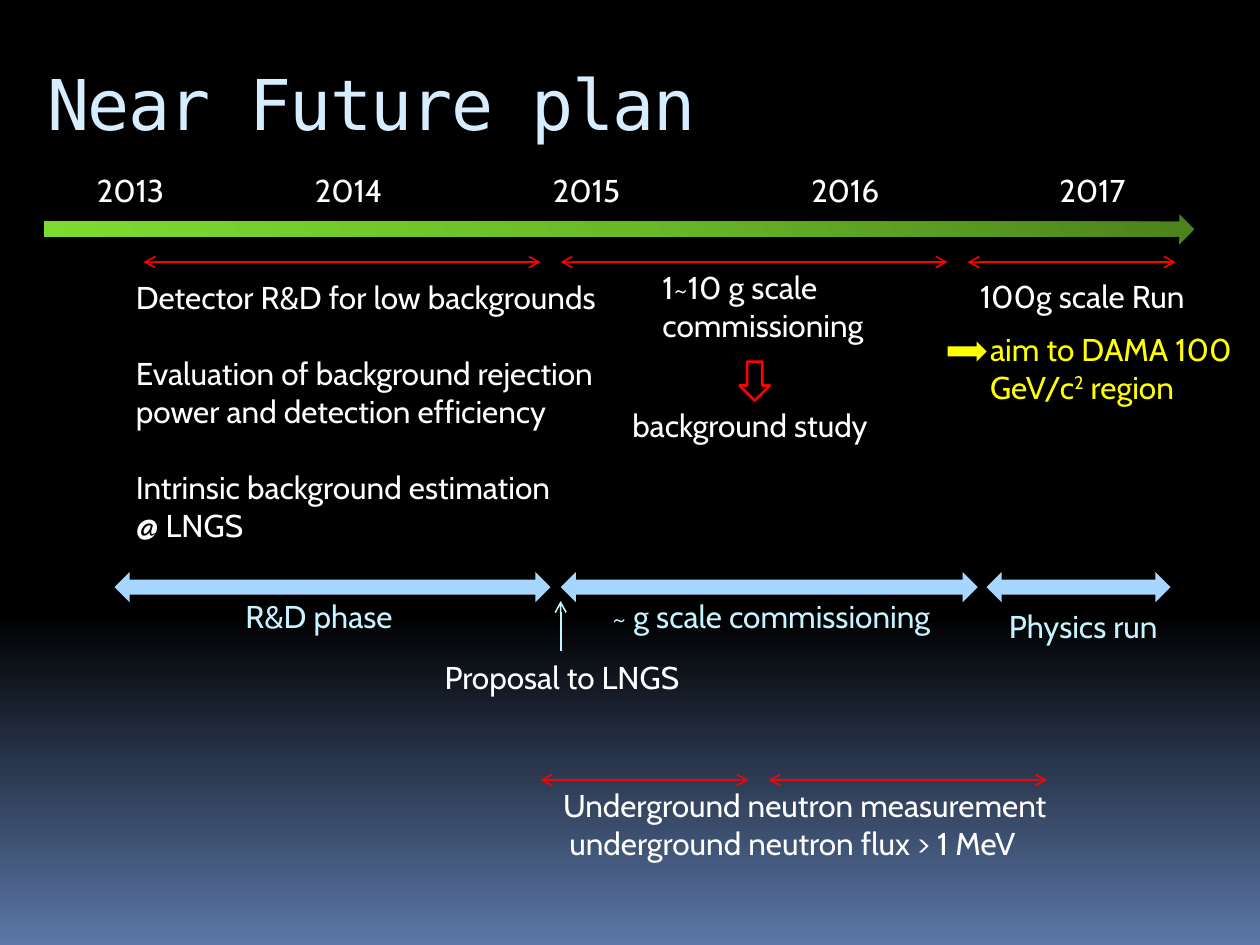
from lxml.etree import SubElement
from pptx import Presentation
from pptx.dml.color import RGBColor
from pptx.enum.shapes import MSO_CONNECTOR, MSO_SHAPE as Shape
from pptx.oxml.ns import qn
from pptx.util import Inches, Pt

WHITE, RED, YELLOW = "FFFFFF", "FF0000", "FFFF00"
PHASE_BAR, PHASE_TEXT = "A7D6FF", "C5F3FF"


def color(hex_code):
    return RGBColor.from_string(hex_code)


def set_gradient(fill, owner, stops, angle):
    """Fill with (percent, hex) stops, at a counter-clockwise angle."""
    fill.gradient()
    fill.gradient_angle = angle
    stop_list = owner.find(".//" + qn("a:gsLst"))
    for old_stop in list(stop_list):
        stop_list.remove(old_stop)
    for percent, hex_code in stops:
        stop = SubElement(stop_list, qn("a:gs"), pos=str(percent * 1000))
        SubElement(stop, qn("a:srgbClr"), val=hex_code)


class TimelineSlide:
    """Holds the text style and the slide being drawn."""

    font_name = "Cabin"
    font_size = 18

    def __init__(self, slide):
        self.slide = slide

    def background(self, stops, angle):
        set_gradient(self.slide.background.fill, self.slide._element, stops, angle)

    def text(self, left, top, width, height, *lines, ink=WHITE, size=None, font=None):
        box = self.slide.shapes.add_textbox(
            Inches(left), Inches(top), Inches(width), Inches(height))
        frame = box.text_frame
        frame.word_wrap = True
        for index, line in enumerate(lines):
            paragraph = frame.paragraphs[0] if index == 0 else frame.add_paragraph()
            paragraph.text = line
            paragraph.font.name = font or self.font_name
            paragraph.font.size = Pt(size or self.font_size)
            paragraph.font.color.rgb = color(ink)
        return frame

    def block_arrow(self, kind, left, top, width, height, fill=None, outline=None):
        arrow = self.slide.shapes.add_shape(
            kind, Inches(left), Inches(top), Inches(width), Inches(height))
        arrow.shadow.inherit = False
        if fill:
            arrow.fill.solid()
            arrow.fill.fore_color.rgb = color(fill)
        else:
            arrow.fill.background()
        if outline:
            arrow.line.color.rgb = color(outline)
            arrow.line.width = Pt(1.5)
        else:
            arrow.line.fill.background()
        return arrow

    def line_arrow(self, x1, y1, x2, y2, ink, ends=("headEnd", "tailEnd")):
        arrow = self.slide.shapes.add_connector(
            MSO_CONNECTOR.STRAIGHT, Inches(x1), Inches(y1), Inches(x2), Inches(y2))
        arrow.line.color.rgb = color(ink)
        arrow.line.width = Pt(0.94)
        for end in ends:
            SubElement(arrow.line._ln, qn("a:" + end), type="arrow")
        SubElement(arrow._element.spPr, qn("a:effectLst"))


def main():
    deck = Presentation()
    deck.slide_width, deck.slide_height = Inches(10), Inches(7.5)
    plan = TimelineSlide(deck.slides.add_slide(deck.slide_layouts[6]))
    plan.background([(0, "000000"), (65, "000000"), (100, "5B77A8")], 270)

    title = plan.text(0.28, 0.39, 8.5, 1, "Near Future plan",
                      ink="D6ECFF", size=40, font="DejaVu Sans Mono")
    title.margin_top = Inches(0.09)
    title.paragraphs[0].runs[0].font._element.set("spc", "-100")

    # Year axis
    axis = plan.block_arrow(Shape.RIGHT_ARROW, 0.35, 1.7, 9.13, 0.24)
    set_gradient(axis.fill, axis._element,
                 [(0, "4B821C"), (50, "6ABA28"), (100, "7EDC30")], 225)
    for year, left in enumerate((0.67, 2.4, 4.29, 6.34, 8.31), start=2013):
        plan.text(left, 1.31, 1.89, 0.4, str(year))

    # Activity spans: upper row, then neutron measurement
    for start, end, y in ((1.14, 4.29, 2.08), (4.45, 7.52, 2.08), (7.68, 9.33, 2.08),
                          (4.29, 5.94, 6.19), (6.1, 8.31, 6.19)):
        plan.line_arrow(start, y, end, y, RED)

    research = plan.text(
        0.98, 2.16, 5.91, 2.83,
        "Detector R&D for low backgrounds",
        "Evaluation of background rejection", "power and detection efficiency",
        "Intrinsic background estimation", "@ LNGS")
    for topic_start in (1, 3):
        research.paragraphs[topic_start].space_before = Pt(21.8)

    plan.text(5.16, 2.08, 2.36, 0.71, "1~10 g scale commissioning")
    plan.block_arrow(Shape.DOWN_ARROW, 5.87, 2.87, 0.24, 0.31, outline=RED)
    plan.text(4.92, 3.17, 2.36, 0.4, "background study")

    plan.text(7.68, 2.15, 2.36, 0.4, "100g scale Run")
    plan.block_arrow(Shape.RIGHT_ARROW, 7.52, 2.71, 0.31, 0.16, fill=YELLOW)
    aim = plan.text(7.76, 2.57, 2.28, 0.71, "aim to DAMA 100 GeV/c", ink=YELLOW)
    exponent = aim.paragraphs[0].add_run()
    exponent.text = "2"
    exponent.font._element.set("baseline", "30000")
    aim.paragraphs[0].add_run().text = " region"

    # Phases: bar left and width, then label position
    for phase, bar_left, bar_width, label_left, label_top in (
            ("R&D phase", 0.91, 3.46, 1.85, 4.69),
            ("~ g scale commissioning", 4.45, 3.31, 4.76, 4.69),
            ("Physics run", 7.83, 1.46, 7.91, 4.77)):
        plan.block_arrow(Shape.LEFT_RIGHT_ARROW, bar_left, 4.54, bar_width, 0.24,
                         fill=PHASE_BAR)
        plan.text(label_left, label_top, 2.83, 0.4, phase, ink=PHASE_TEXT)

    plan.line_arrow(4.45, 5.17, 4.45, 4.77, PHASE_TEXT, ends=("tailEnd",))
    plan.text(3.43, 5.17, 2.36, 0.4, "Proposal to LNGS")

    neutrons = plan.text(4.37, 6.19, 5.91, 0.71, "Underground neutron measurement",
                         "underground neutron flux > 1 MeV")
    neutrons.paragraphs[1]._p.get_or_add_pPr().set("marL", str(Inches(0.05)))

    deck.save("out.pptx")


if __name__ == "__main__":
    main()
